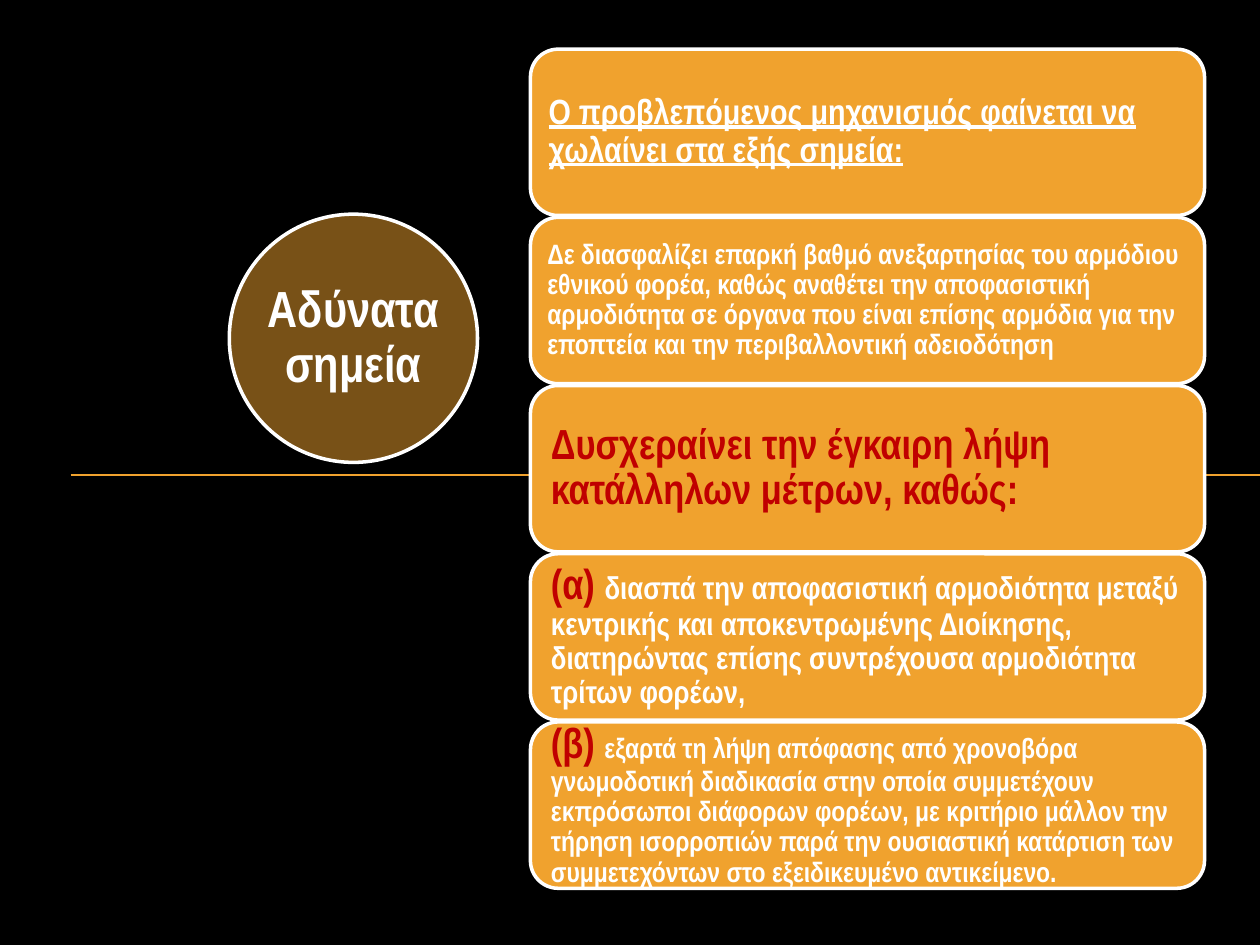
from lxml import etree
from pptx import Presentation
from pptx.dml.color import RGBColor
from pptx.enum.shapes import MSO_CONNECTOR, MSO_SHAPE
from pptx.enum.text import MSO_ANCHOR, PP_ALIGN
from pptx.oxml.ns import qn
from pptx.util import Inches, Pt

ELLIPSE, ROUNDED = MSO_SHAPE.OVAL, MSO_SHAPE.ROUNDED_RECTANGLE
LEFT, CENTER, MIDDLE = PP_ALIGN.LEFT, PP_ALIGN.CENTER, MSO_ANCHOR.MIDDLE
BLACK, WHITE, ORANGE, RED = "000000", "FFFFFF", "F0A22E", "C00000"

# Each run: text, size, colour, underlined
HEADING = [("Αδύνατα σημεία", 29, WHITE, False)]
# Each point: inset, runs
POINTS = [
    (0.08, [("Ο προβλεπόμενος μηχανισμός φαίνεται να χωλαίνει στα εξής σημεία:",
             20, WHITE, True)]),
    (0.07, [("Δε διασφαλίζει επαρκή βαθμό ανεξαρτησίας του αρμόδιου εθνικού φορέα, "
             "καθώς αναθέτει την αποφασιστική αρμοδιότητα σε όργανα που είναι επίσης "
             "αρμόδια για την εποπτεία και την περιβαλλοντική αδειοδότηση",
             16, WHITE, False)]),
    (0.1, [("Δυσχεραίνει την έγκαιρη λήψη κατάλληλων μέτρων, καθώς:",
            24, RED, False)]),
    (0.1, [("(α) ", 24, RED, False),
           ("διασπά την αποφασιστική αρμοδιότητα μεταξύ κεντρικής και "
            "αποκεντρωμένης Διοίκησης, διατηρώντας επίσης συντρέχουσα αρμοδιότητα "
            "τρίτων φορέων,", 18, WHITE, False)]),
    (0.1, [("(β) ", 24, RED, False),
           ("εξαρτά τη λήψη απόφασης από χρονοβόρα γνωμοδοτική διαδικασία στην "
            "οποία συμμετέχουν εκπρόσωποι διάφορων φορέων, με κριτήριο μάλλον την "
            "τήρηση ισορροπιών παρά την ουσιαστική κατάρτιση των συμμετεχόντων στο "
            "εξειδικευμένο αντικείμενο.", 16, WHITE, False)]),
]
POINT_LEFT, POINT_WIDTH, POINT_HEIGHT = 4.21, 5.35, 1.32
FIRST_TOP, LAST_TOP = 0.39, 5.73


def rgb(colour):
    return RGBColor.from_string(colour)


def add_panel(slide, preset, box, runs, inset, align):
    """Add an orange, white-edged shape holding one paragraph of runs."""
    panel = slide.shapes.add_shape(preset, *map(Inches, box))
    panel.shadow.inherit = False
    panel.fill.solid()
    panel.fill.fore_color.rgb = rgb(ORANGE)
    panel.line.color.rgb = rgb(WHITE)
    panel.line.width = Pt(2)
    frame = panel.text_frame
    frame.word_wrap = True
    frame.vertical_anchor = MIDDLE
    for side in ("left", "top", "right", "bottom"):
        setattr(frame, f"margin_{side}", Inches(inset))
    paragraph = frame.paragraphs[0]
    paragraph.alignment = align
    paragraph.line_spacing = 0.9
    for text, size, colour, underlined in runs:
        run = paragraph.add_run()
        run.text = text
        run.font.color.rgb = rgb(colour)
        style = {"name": "Arial Narrow", "size": Pt(size), "bold": True,
                 "underline": underlined}
        for key, value in style.items():
            setattr(run.font, key, value)
    return panel


def main():
    prs = Presentation()
    prs.slide_width, prs.slide_height = Inches(10), Inches(7.5)
    slide = prs.slides.add_slide(prs.slide_layouts[6])
    slide.background.fill.solid()
    slide.background.fill.fore_color.rgb = rgb(BLACK)

    rule = slide.shapes.add_connector(
        MSO_CONNECTOR.STRAIGHT, Inches(0.56), Inches(3.77), Inches(10), Inches(3.77))
    rule.line.color.rgb = rgb(ORANGE)
    rule.line.width = Pt(0.75)
    etree.SubElement(rule._element.spPr, qn("a:effectLst"))

    circle = add_panel(slide, ELLIPSE, (1.82, 1.7, 1.97, 1.97), HEADING, 0, CENTER)
    fill_colour = circle._element.spPr.find(qn("a:solidFill"))[0]
    etree.SubElement(fill_colour, qn("a:alpha"), val="50000")

    pitch = (LAST_TOP - FIRST_TOP) / (len(POINTS) - 1)
    for row, (inset, runs) in enumerate(POINTS):
        box = (POINT_LEFT, FIRST_TOP + row * pitch, POINT_WIDTH, POINT_HEIGHT)
        add_panel(slide, ROUNDED, box, runs, inset, LEFT)

    prs.save("out.pptx")


if __name__ == "__main__":
    main()
